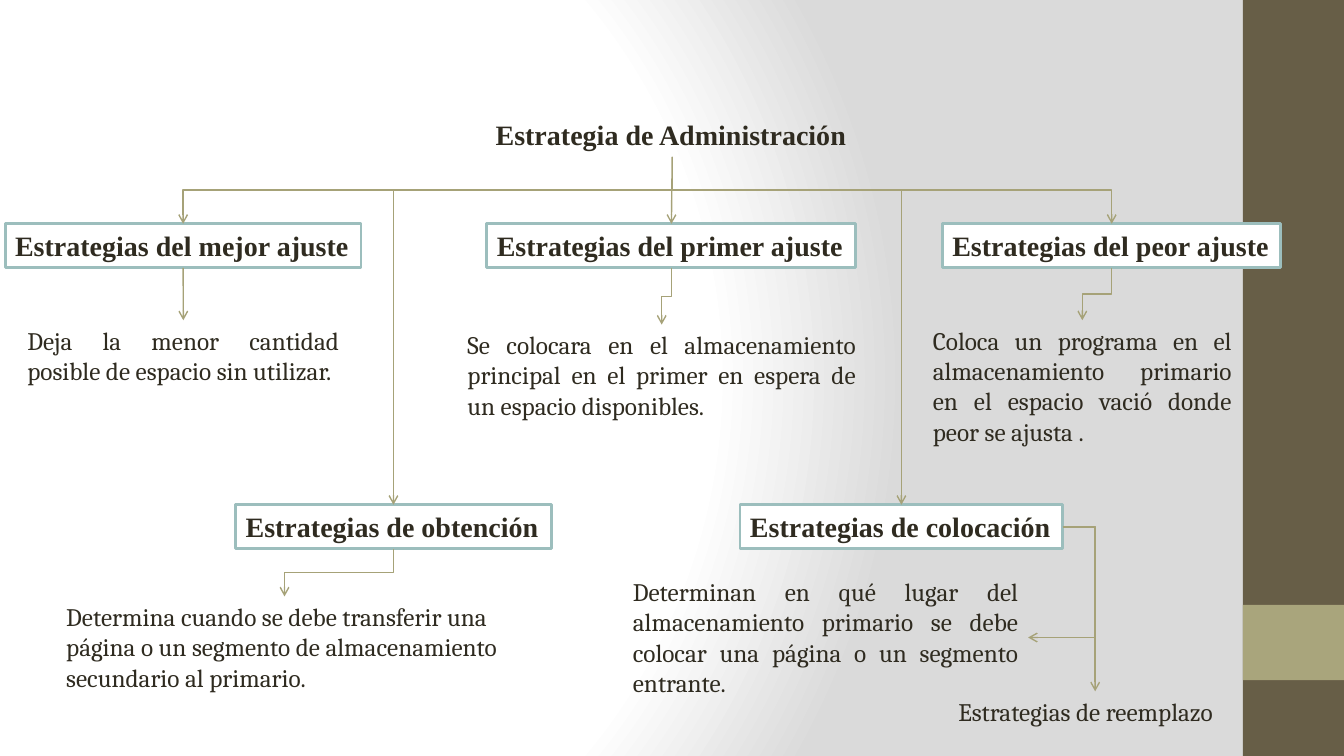
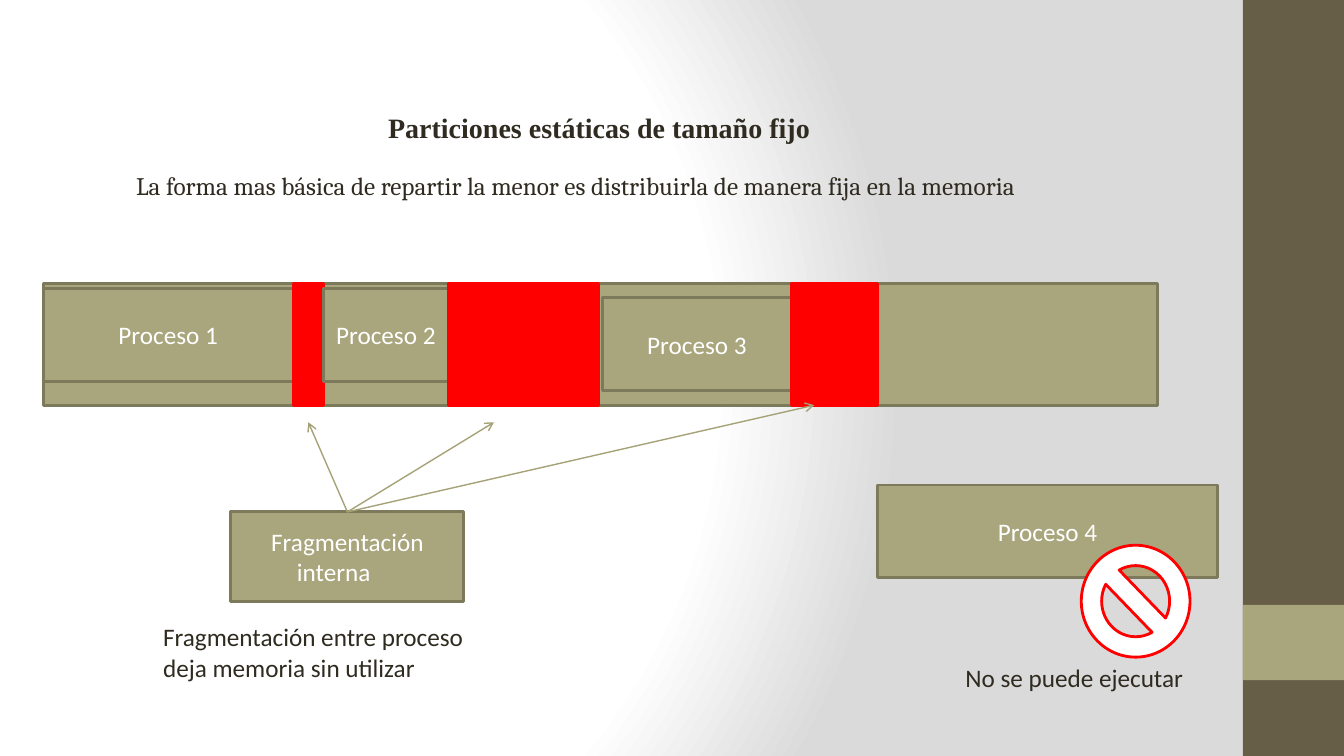
from collections import namedtuple
from lxml import etree
from pptx import Presentation
from pptx.dml.color import RGBColor
from pptx.enum.shapes import MSO_CONNECTOR as Link, MSO_SHAPE as Form
from pptx.enum.text import MSO_ANCHOR as Anchor, MSO_AUTO_SIZE as Auto, PP_ALIGN as Align
from pptx.oxml import parse_xml
from pptx.oxml.ns import nsdecls, qn
from pptx.util import Cm, Pt

INK, WHITE, RED = "2F2B20", "FFFFFF", "FF0000"
OLIVE, EDGE, BROWN = "A9A57C", "7D7A5C", "675E47"
TEAL, WIRE, GREY = "9CBEBD", "A6A278", "DADADA"
TITLE, SERIF, SANS = "Times New Roman", "Cambria", "Calibri"
WIDE, HIGH = 33.87, 19.05
LINE = 1.11

Point = namedtuple("Point", "x y")


class Box(namedtuple("Box", "x y w h")):
    @property
    def top(self):
        return Point(self.x + self.w / 2, self.y)

    @property
    def foot(self):
        return Point(self.x + self.w / 2, self.y + self.h)

    @property
    def side(self):
        return Point(self.x + self.w, self.y + self.h / 2)

    def inner(self, x, y, w, h):
        return Box(self.x + x, self.y + y, w, h)

    def cm(self):
        return [Cm(v) for v in self]


def color(code):
    return RGBColor.from_string(code)


def write(shape, text, font, size=18, ink=INK, bold=False, align=Align.LEFT, wrap=True):
    frame = shape.text_frame
    frame.word_wrap = wrap
    para = frame.paragraphs[0]
    para.alignment = align
    run = para.add_run()
    run.text = text
    run.font.name, run.font.size, run.font.bold = font, Pt(size), bold
    run.font.color.rgb = color(ink)
    return frame


def block(slide, box, fill=OLIVE, edge=EDGE, form=Form.RECTANGLE):
    shape = slide.shapes.add_shape(form, *box.cm())
    shape.shadow.inherit = False
    shape.fill.solid()
    shape.fill.fore_color.rgb = color(fill)
    if edge:
        shape.line.color.rgb = color(edge)
        shape.line.width = Pt(2)
    else:
        shape.line.fill.background()
    return shape


def note(slide, box, text, font=SERIF, **style):
    shape = slide.shapes.add_textbox(*box.cm())
    write(shape, text, font, **style).auto_size = Auto.SHAPE_TO_FIT_TEXT


def head(slide, box, text):
    note(slide, box, text, TITLE, size=20, bold=True, wrap=False)


def label(slide, box, text):
    frame = write(block(slide, box, WHITE, TEAL), text, TITLE, 20, bold=True, wrap=False)
    frame.vertical_anchor = Anchor.TOP
    frame.auto_size = Auto.SHAPE_TO_FIT_TEXT


def task(slide, box, text):
    frame = write(block(slide, box), text, SANS, ink=WHITE, align=Align.CENTER)
    frame.vertical_anchor = Anchor.MIDDLE


def arrow(slide, start, end, kind=Link.STRAIGHT):
    link = slide.shapes.add_connector(kind, Cm(start.x), Cm(start.y), Cm(end.x), Cm(end.y))
    link.line.color.rgb = color(WIRE)
    link.line.width = Pt(1)
    props = link._element.spPr
    etree.SubElement(props.find(qn("a:ln")), qn("a:tailEnd"), type="arrow")
    etree.SubElement(props, qn("a:effectLst"))
    return link


def bend(link, ratio):
    stops = link._element.spPr.find(qn("a:prstGeom")).find(qn("a:avLst"))
    etree.SubElement(stops, qn("a:gd"), name="adj1", fmla=f"val {round(ratio * 100000)}")


def drop(slide, start, end, depth=None):
    run, fall = end.x - start.x, end.y - start.y
    if abs(run) < 0.05:
        arrow(slide, start, end)
        return
    mid = Point((start.x + end.x) / 2, (start.y + end.y) / 2)
    turn = 1 if run < 0 else -1
    first = Point(mid.x - turn * fall / 2, mid.y - abs(run) / 2)
    last = Point(mid.x + turn * fall / 2, mid.y + abs(run) / 2)
    link = arrow(slide, first, last, Link.ELBOW)
    xfrm = link._element.spPr.find(qn("a:xfrm"))
    xfrm.set("rot", str(turn * 90 % 360 * 60000))
    bend(link, depth / fall if depth else 0.5)


def theme(deck, slide):
    master = deck.slide_master
    master.background.fill.gradient()
    old = master.element.find(".//" + qn("a:gradFill"))
    stops = "".join(
        f'<a:gs pos="{pos}000"><a:srgbClr val="{code}"/></a:gs>'
        for pos, code in ((0, WHITE), (75, WHITE), (100, GREY))
    )
    new = parse_xml(
        f'<a:gradFill {nsdecls("a")} rotWithShape="1"><a:gsLst>{stops}</a:gsLst>'
        '<a:path path="circle"><a:fillToRect l="20000" t="50000" r="100000" b="50000"/>'
        "</a:path></a:gradFill>"
    )
    old.getparent().replace(old, new)
    band = Box(31.32, 0, 2.55, HIGH)
    bars = ((band, BROWN), (band.inner(0, 15.24, band.w, 1.9), OLIVE))
    for index, (box, fill) in enumerate(bars):
        bar = block(slide, box, fill, None)._element
        bar.nvSpPr.cNvPr.set("id", str(50 + index))
        master.shapes._spTree.append(bar)


def branch(slide, root, box, text, area, detail, align=Align.JUSTIFY):
    label(slide, box, text)
    drop(slide, root, box.top, 0.84)
    note(slide, area, detail, align=align)


def tree(slide, box):
    title = box.inner(12.24, 2.84, 9.4, LINE)
    head(slide, title, "Estrategia de Administración")
    root = title.foot
    items = (
        ((0.13, 5.64, 8.97), "Estrategias del mejor ajuste", (0.44, 8.07, 8.36, 2.56),
         "Deja la menor cantidad posible de espacio sin utilizar.", Align.JUSTIFY),
        ((12.27, 5.64, 9.3), "Estrategias del primer ajuste", (11.53, 8.18, 10.29, 2.56),
         "Se colocara en el almacenamiento principal en el primer en espera de un espacio disponibles.",
         Align.JUSTIFY),
        ((23.75, 5.64, 8.53), "Estrategias del peor ajuste", (23.26, 8.07, 8.03, 3.33),
         "Coloca un programa en el almacenamiento primario en el espacio vació donde peor se ajusta .",
         Align.JUSTIFY),
        ((5.94, 12.72, 7.95), "Estrategias de obtención", (1.42, 15.03, 11.5, 2.56),
         "Determina cuando se debe transferir una página o un segmento de almacenamiento "
         "secundario al primario.", Align.LEFT),
    )
    for spot, text, area, detail, align in items:
        name, body = box.inner(*spot, LINE), box.inner(*area)
        branch(slide, root, name, text, body, detail, align)
        drop(slide, name.foot, body.top)
    place(slide, root, box.inner(15.7, 12.72, 15.6, 5.72))


def place(slide, root, box):
    name = box.inner(2.95, 0, 8.13, LINE)
    body = box.inner(0, 1.68, 10.21, 3.33)
    swap = box.inner(8.2, 4.7, 7.4, 1.02)
    branch(slide, root, name, "Estrategias de colocación", body,
           "Determinan en qué lugar del almacenamiento primario se debe colocar "
           "una página o un segmento entrante.")
    note(slide, swap, "Estrategias de reemplazo", wrap=False)
    down = arrow(slide, name.side, swap.top, Link.ELBOW)
    down._element.spPr.find(qn("a:prstGeom")).set("prst", "bentConnector2")
    back = arrow(slide, name.side, body.side, Link.ELBOW)
    bend(back, (swap.top.x - name.side.x) / (body.side.x - name.side.x))


def memory(slide, box):
    lefts = (0, 7.06, 14, 21.03)
    for left in lefts:
        block(slide, box.inner(left, 0, 7.06, box.h))
    tasks = ((0, 0.13, 6.3), (7.06, 0.13, 3.15), (14.1, 0.36, 4.75))
    for index, (left, top, width) in enumerate(tasks, 1):
        task(slide, box.inner(left, top, width, 2.34), f"Proceso {index}")
        right = left + width
        block(slide, box.inner(right, 0, lefts[index] - right, box.h), RED, RED)


def waste(slide, box):
    cause = box.inner(1.96, 2.69, 5.87, 2.26)
    task(slide, cause, "Fragmentación interna\t")
    for x, y in ((3.91, 0.43), (8.59, 0.43), (16.66, 0)):
        arrow(slide, cause.top, Point(box.x + x, box.y + y))
    note(slide, box.inner(0, 5.33, 8.2, 1.8),
         "Fragmentación entre proceso deja memoria sin utilizar", SANS)


def blocked(slide, box):
    task(slide, box.inner(0, 0, 8.56, 2.34), "Proceso 4")
    block(slide, box.inner(5.13, 1.52, 2.74, 2.82), WHITE, RED, Form.NO_SYMBOL)
    note(slide, box.inner(1.96, 4.34, 6.32, 1.02), "No se puede ejecutar", SANS)


def fixed(slide, box):
    head(slide, box.inner(9.53, 2.67, 11.35, LINE), "Particiones estáticas de tamaño fijo")
    note(slide, box.inner(3.18, 4.17, 23.98, 1.02),
         "La forma mas básica de repartir la menor es distribuirla de manera fija en la memoria",
         wrap=False)
    memory(slide, box.inner(1.09, 7.14, 28.09, 3.07))
    waste(slide, box.inner(3.86, 10.21, 16.66, 7.13))
    blocked(slide, box.inner(22.12, 12.22, 8.56, 5.36))


def main():
    deck = Presentation()
    deck.slide_width, deck.slide_height = Cm(WIDE), Cm(HIGH)
    blank = deck.slide_layouts[6]
    page = Box(0, 0, WIDE, HIGH)
    slides = [deck.slides.add_slide(blank) for _ in range(2)]
    theme(deck, slides[0])
    for slide, build in zip(slides, (tree, fixed)):
        build(slide, page)
    deck.save("out.pptx")


if __name__ == "__main__":
    main()
